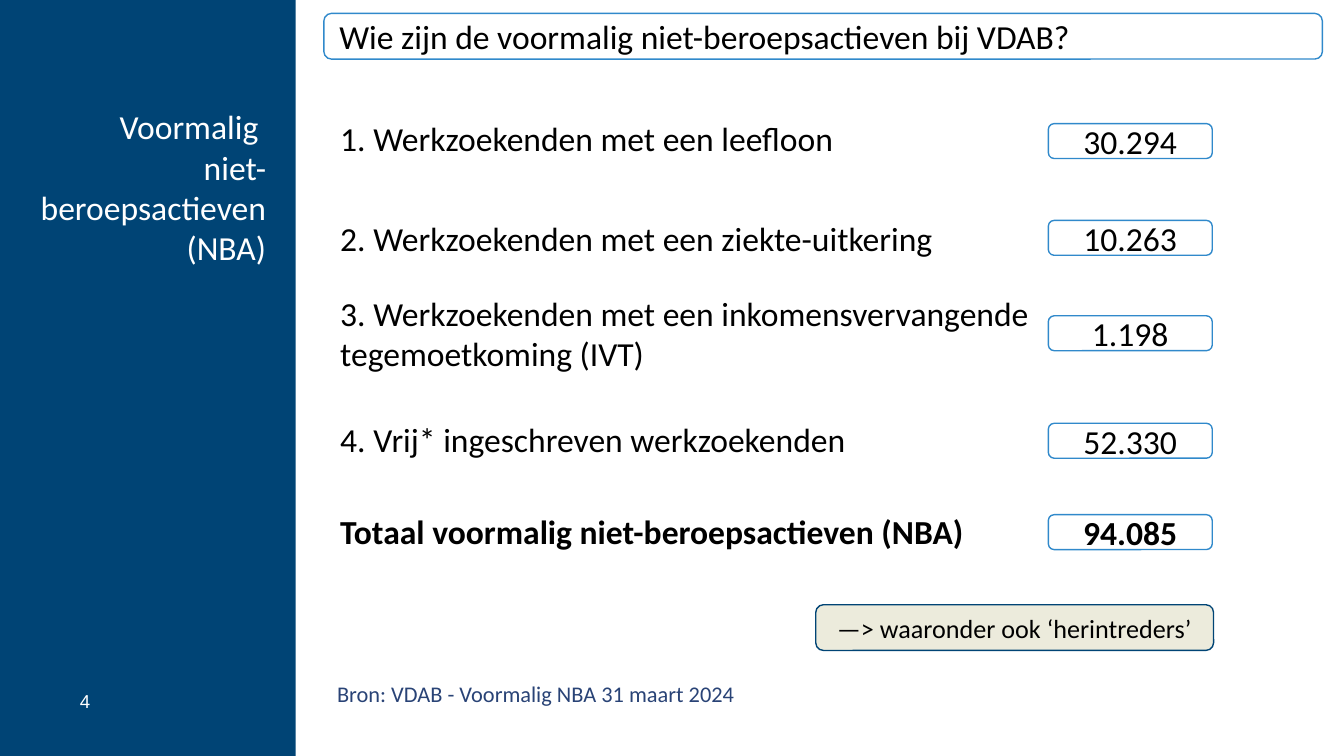
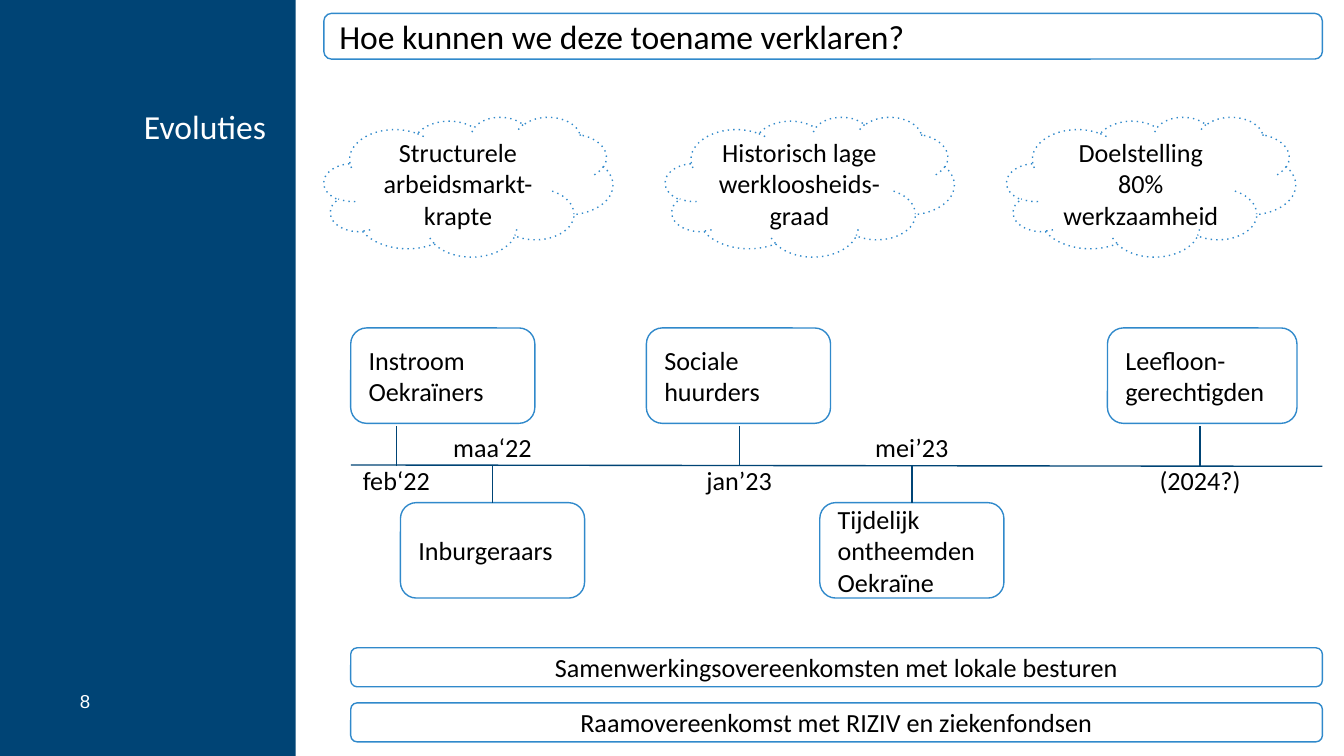
from typing import NamedTuple

from lxml.etree import SubElement
from pptx import Presentation
from pptx.dml.color import RGBColor
from pptx.enum.dml import MSO_LINE
from pptx.enum.shapes import MSO_CONNECTOR, MSO_SHAPE
from pptx.enum.text import MSO_ANCHOR, MSO_AUTO_SIZE, PP_ALIGN
from pptx.oxml.ns import qn
from pptx.util import Inches, Pt

NAVY = RGBColor(0x00, 0x44, 0x75)
BLUE = RGBColor(0x30, 0x89, 0xCB)
SOURCE_BLUE = RGBColor(0x29, 0x43, 0x76)
SAND = RGBColor(0xEC, 0xEB, 0xDC)
WHITE = RGBColor(0xFF, 0xFF, 0xFF)
BLACK = RGBColor(0x00, 0x00, 0x00)

LEFT, CENTER, RIGHT = PP_ALIGN.LEFT, PP_ALIGN.CENTER, PP_ALIGN.RIGHT
TOP_SIDE = 0
WIDTH = 10
HEIGHT = WIDTH * 9 / 16


class Box(NamedTuple):
    left: float
    top: float
    width: float
    height: float

    def lengths(self):
        return [Inches(value) for value in self]


def write(frame, lines, size, color=BLACK, align=LEFT, bold=False,
          font="Calibri", anchor=MSO_ANCHOR.MIDDLE, insets=(0.1, 0.1, 0.1, 0.1)):
    frame.word_wrap = True
    frame.auto_size = MSO_AUTO_SIZE.NONE
    frame.vertical_anchor = anchor
    (frame.margin_left, frame.margin_top,
     frame.margin_right, frame.margin_bottom) = [Inches(inset) for inset in insets]
    for index, line in enumerate(lines):
        paragraph = frame.add_paragraph() if index else frame.paragraphs[0]
        paragraph.alignment = align
        run = paragraph.add_run()
        run.text = line
        run.font.name = font
        run.font.size = Pt(size)
        run.font.bold = bold
        run.font.color.rgb = color


def add_panel(slide, box, lines=(), size=14, line=BLUE, fill=None,
              kind=MSO_SHAPE.ROUNDED_RECTANGLE, **style):
    panel = slide.shapes.add_shape(kind, *box.lengths())
    panel.shadow.inherit = False
    if fill is None:
        panel.fill.background()
    else:
        panel.fill.solid()
        panel.fill.fore_color.rgb = fill
    if line is None:
        panel.line.fill.background()
    else:
        panel.line.color.rgb = line
        panel.line.width = Pt(0.75)
    write(panel.text_frame, lines, size, **style)
    return panel


def add_text(slide, box, text, size, **style):
    caption = slide.shapes.add_textbox(*box.lengths())
    write(caption.text_frame, [text], size, **style)


def add_rule(slide, x1, y1, x2, y2):
    rule = slide.shapes.add_connector(
        MSO_CONNECTOR.STRAIGHT, Inches(x1), Inches(y1), Inches(x2), Inches(y2))
    rule.line.color.rgb = NAVY
    rule.line.width = Pt(0.75)
    SubElement(rule.element.spPr, qn("a:effectLst"))
    return rule


def add_frame(presentation, title_box, title_lines, number, question):
    slide = presentation.slides.add_slide(presentation.slide_layouts[5])
    title = slide.shapes.title
    title.left, title.top, title.width, title.height = title_box.lengths()
    write(title.text_frame, title_lines, 18, color=WHITE, align=RIGHT,
          anchor=MSO_ANCHOR.TOP, insets=(0.1, 0, 0, 0.1))
    add_text(slide, Box(0.17, 5, 0.6, 0.43), number, 10,
             color=WHITE, align=RIGHT, font="Arial")
    add_panel(slide, Box(2.41, 0.1, 7.43, 0.34), [question], 18)
    return slide


def add_side_band(slide):
    band = add_panel(slide, Box(0, 0, 2.2, HEIGHT), line=None, fill=NAVY,
                     kind=MSO_SHAPE.RECTANGLE)
    slide.slide_layout.shapes.element.insert(2, band.element)


def add_counts(slide, box, rows):
    value_width = 1.22
    label_width = box.width - value_width
    for label_offset, value_offset, label, value, bold in rows:
        add_panel(slide, Box(box.left, box.top + label_offset, label_width, 0.48),
                  [label], 18, line=None, bold=bold)
        add_panel(slide, Box(box.left + label_width, box.top + value_offset,
                             value_width, 0.26),
                  [value], 18, align=CENTER, bold=bold)


def add_clouds(slide, box, causes):
    width = 2.15
    pitch = (box.width - width) / (len(causes) - 1)
    for index, lines in enumerate(causes):
        cloud = add_panel(slide, Box(box.left + index * pitch, box.top, width, box.height),
                          lines, kind=MSO_SHAPE.CLOUD, align=CENTER)
        cloud.line.dash_style = MSO_LINE.ROUND_DOT
        cloud.element.spPr.find(".//" + qn("a:prstDash")).set("val", "dot")


def add_timeline(slide, box, early_events, late_events):
    axis = box.top + 1.02
    event_height, date_width, date_height = 0.71, 1.23, 0.34
    add_rule(slide, box.left, axis, box.left + box.width, axis + 0.01)

    def add_date(center, top, date):
        add_panel(slide, Box(center - date_width / 2, top, date_width, date_height),
                  [date], line=None, align=CENTER)

    for offset, width, stem_offset, lines, date in early_events:
        left = box.left + offset
        stem_x = left + stem_offset
        add_panel(slide, Box(left, box.top, width, event_height), lines)
        add_rule(slide, stem_x, axis - 0.29, stem_x, axis + 0.01)
        add_date(stem_x, axis - 0.06, date)

    for offset, width, lines, date in late_events:
        left = box.left + offset
        stem_x = left + width / 2
        top = box.top + box.height - event_height
        event = add_panel(slide, Box(left, top, width, event_height), lines)
        stem = add_rule(slide, stem_x, axis, stem_x, top)
        stem.end_connect(event, TOP_SIDE)
        add_date(stem_x, axis - 0.3, date)


def add_agreements(slide, box, agreements):
    height = 0.29
    pitch = (box.height - height) / (len(agreements) - 1)
    for index, agreement in enumerate(agreements):
        add_panel(slide, Box(box.left, box.top + index * pitch, box.width, height),
                  [agreement], align=CENTER)


def build_counts_slide(presentation):
    slide = add_frame(
        presentation, Box(0.17, 0.79, 1.81, 2.18),
        ["Voormalig ", "niet-", "beroepsactieven", "(NBA)"], "4",
        "Wie zijn de voormalig niet-beroepsactieven bij VDAB?")
    add_side_band(slide)
    add_counts(slide, Box(2.41, 0.79, 6.61, 3.4), [
        (0, 0.13, "1. Werkzoekenden met een leefloon", "30.294", False),
        (0.74, 0.85, "2. Werkzoekenden met een ziekte-uitkering", "10.263", False),
        (1.45, 1.56, "3. Werkzoekenden met een inkomensvervangende tegemoetkoming (IVT)",
         "1.198", False),
        (2.24, 2.36, "4. Vrij* ingeschreven werkzoekenden", "52.330", False),
        (2.92, 3.04, "Totaal voormalig niet-beroepsactieven (NBA)", "94.085", True),
    ])
    add_panel(slide, Box(6.07, 4.5, 2.96, 0.34), ["—> waaronder ook ‘herintreders’"],
              line=NAVY, fill=SAND, align=CENTER)
    add_text(slide, Box(2.41, 5.01, 4.27, 0.3),
             "Bron: VDAB - Voormalig NBA 31 maart 2024", 12, color=SOURCE_BLUE)


def build_causes_slide(presentation):
    slide = add_frame(presentation, Box(0.3, 0.79, 1.68, 2.18), ["Evoluties"], "8",
                      "Hoe kunnen we deze toename verklaren?")
    add_clouds(slide, Box(2.41, 0.87, 7.23, 1.04), [
        ["Structurele arbeidsmarkt-", "krapte"],
        ["Historisch lage werkloosheids-", "graad"],
        ["Doelstelling 80% werkzaamheid"],
    ])
    add_timeline(slide, Box(2.61, 2.44, 7.23, 2.01), [
        (0, 1.37, 0.34, ["Instroom Oekraïners"], "feb‘22"),
        (2.2, 1.37, 0.69, ["Sociale huurders"], "jan’23"),
        (5.63, 1.41, 0.69, ["Leefloon-", "gerechtigden"], "(2024?)"),
    ], [
        (0.37, 1.37, ["Inburgeraars"], "maa‘22"),
        (3.49, 1.37, ["Tijdelijk ontheemden Oekraïne"], "mei’23"),
    ])
    add_agreements(slide, Box(2.61, 4.82, 7.23, 0.7), [
        "Samenwerkingsovereenkomsten met lokale besturen",
        "Raamovereenkomst met RIZIV en ziekenfondsen",
    ])


def main():
    presentation = Presentation()
    presentation.slide_width = Inches(WIDTH)
    presentation.slide_height = Inches(HEIGHT)
    build_counts_slide(presentation)
    build_causes_slide(presentation)
    presentation.save("out.pptx")


if __name__ == "__main__":
    main()
